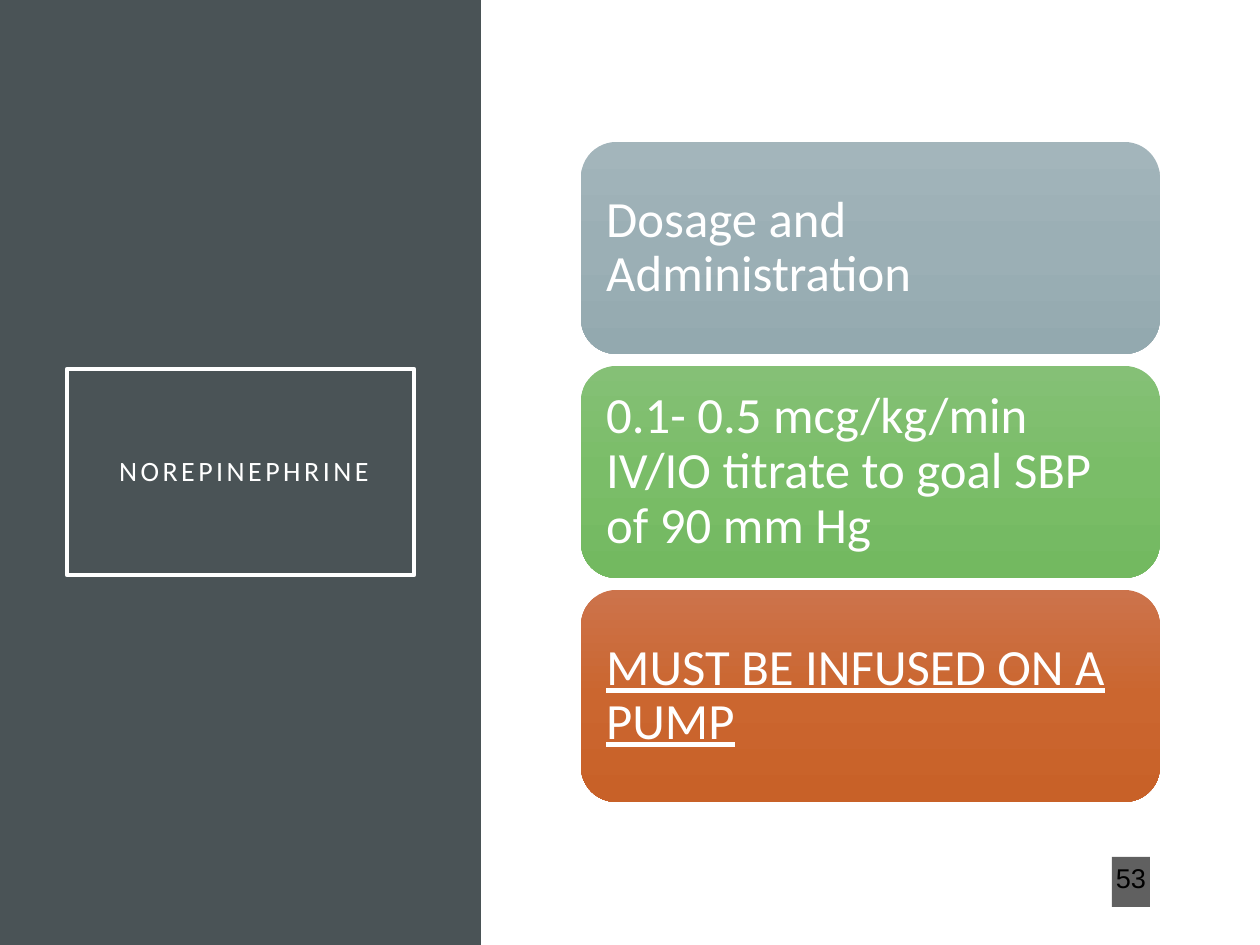
import copy

import pptx
import pptx.dml.color
import pptx.enum.shapes
import pptx.enum.text
import pptx.oxml
import pptx.oxml.ns
import pptx.util

RGBColor = pptx.dml.color.RGBColor
Shape = pptx.enum.shapes.MSO_SHAPE
Align = pptx.enum.text.PP_ALIGN

PX = 914400 / 126
WHITE = RGBColor(0xFF, 0xFF, 0xFF)
BLACK = RGBColor(0x00, 0x00, 0x00)
SLATE = RGBColor(0x4A, 0x53, 0x56)
CHARCOAL = RGBColor(0x1D, 0x1D, 0x1D)
GREY_BLUES = [RGBColor(0xA3, 0xB5, 0xBB), RGBColor(0x9B, 0xAF, 0xB5), RGBColor(0x93, 0xA9, 0xAF)]
GREENS = [RGBColor(0x85, 0xC0, 0x76), RGBColor(0x7A, 0xBD, 0x68), RGBColor(0x73, 0xB9, 0x60)]
ORANGES = [RGBColor(0xCC, 0x73, 0x4B), RGBColor(0xCB, 0x66, 0x2F), RGBColor(0xC8, 0x61, 0x28)]

CARDS = [
    ("Dosage and Administration", GREY_BLUES, False),
    ("0.1- 0.5 mcg/kg/min IV/IO titrate to goal SBP of 90 mm Hg", GREENS, False),
    ("MUST BE INFUSED ON A PUMP", ORANGES, True),
]


def px(length):
    return pptx.util.Emu(round(length * PX))


def add_box(page, kind, left, top, width, height):
    """Add a preset shape without shadow or outline."""
    box = page.shapes.add_shape(kind, px(left), px(top), px(width), px(height))
    box.shadow.inherit = False
    box.line.fill.background()
    return box


def write(box, text, font, size, color, align, spacing, insets):
    """Put one middle-anchored paragraph in a box; insets are left, top, right, bottom."""
    frame = box.text_frame
    frame.word_wrap = True
    frame.vertical_anchor = pptx.enum.text.MSO_ANCHOR.MIDDLE
    (frame.margin_left, frame.margin_top,
     frame.margin_right, frame.margin_bottom) = map(px, insets)
    para = frame.paragraphs[0]
    para.alignment = align
    para.line_spacing = spacing
    span = para.add_run()
    span.text = text
    para.font.name = font
    para.font.size = pptx.util.Pt(size)
    para.font.color.rgb = color
    return para


def fill_downward(box, colors):
    """Fill a box with three evenly spaced colours from top to bottom."""
    box.fill.gradient()
    box.fill.gradient_angle = 270
    stop_list = box.fill.gradient_stops[0]._gs.getparent()
    stop_list.append(copy.deepcopy(stop_list[0]))
    for index, (stop, color) in enumerate(zip(box.fill.gradient_stops, colors)):
        stop.position = index / 2
        stop.color.rgb = color


def add_title_panel(page, left, top, width, height):
    panel = add_box(page, Shape.RECTANGLE, left, top, width, height)
    panel.fill.solid()
    panel.fill.fore_color.rgb = SLATE

    title = add_box(page, Shape.RECTANGLE, left + 67, top + 369, 347, 206)
    title.fill.background()
    title.line.color.rgb = WHITE
    title.line.width = pptx.util.Pt(2.5)
    para = write(title, "NOREPINEPHRINE", "Calibri", 16, WHITE, Align.CENTER, 0.9, (25, 25, 18, 25))
    para.runs[0].font._element.set("spc", "200")


def add_cards(page, left, top, width, height):
    gap = 12
    card_height = (height - gap * (len(CARDS) - 1)) / len(CARDS)
    for index, (text, colors, underlined) in enumerate(CARDS):
        card_top = top + index * (card_height + gap)
        card = add_box(page, Shape.ROUNDED_RECTANGLE, left, card_top, width, card_height)
        fill_downward(card, colors)
        para = write(card, text, "Calibri", 29, WHITE, Align.LEFT, 0.9, (15, 15, 15, 15))
        if underlined:
            para.font.underline = True


def add_page_number(page, left, top, width, height):
    badge = add_box(page, Shape.RECTANGLE, left, top, width, height)
    badge.fill.solid()
    badge.fill.fore_color.rgb = CHARCOAL
    color = badge._element.spPr.find(".//" + pptx.oxml.ns.qn("a:srgbClr"))
    color.append(pptx.oxml.parse_xml(
        f'<a:alpha {pptx.oxml.ns.nsdecls("a")} val="70000"/>'))
    write(badge, "53", "Arial", 15.5, BLACK, Align.CENTER, 0.7, (2, 6, 2, 6))


def main():
    deck = pptx.Presentation()
    deck.slide_width, deck.slide_height = px(1260), px(945)
    page = deck.slides.add_slide(deck.slide_layouts[6])
    add_title_panel(page, 0, 0, 481, 945)
    add_page_number(page, 1112, 857, 38, 50)
    add_cards(page, 581, 142, 579, 660)
    deck.save("out.pptx")


if __name__ == "__main__":
    main()
